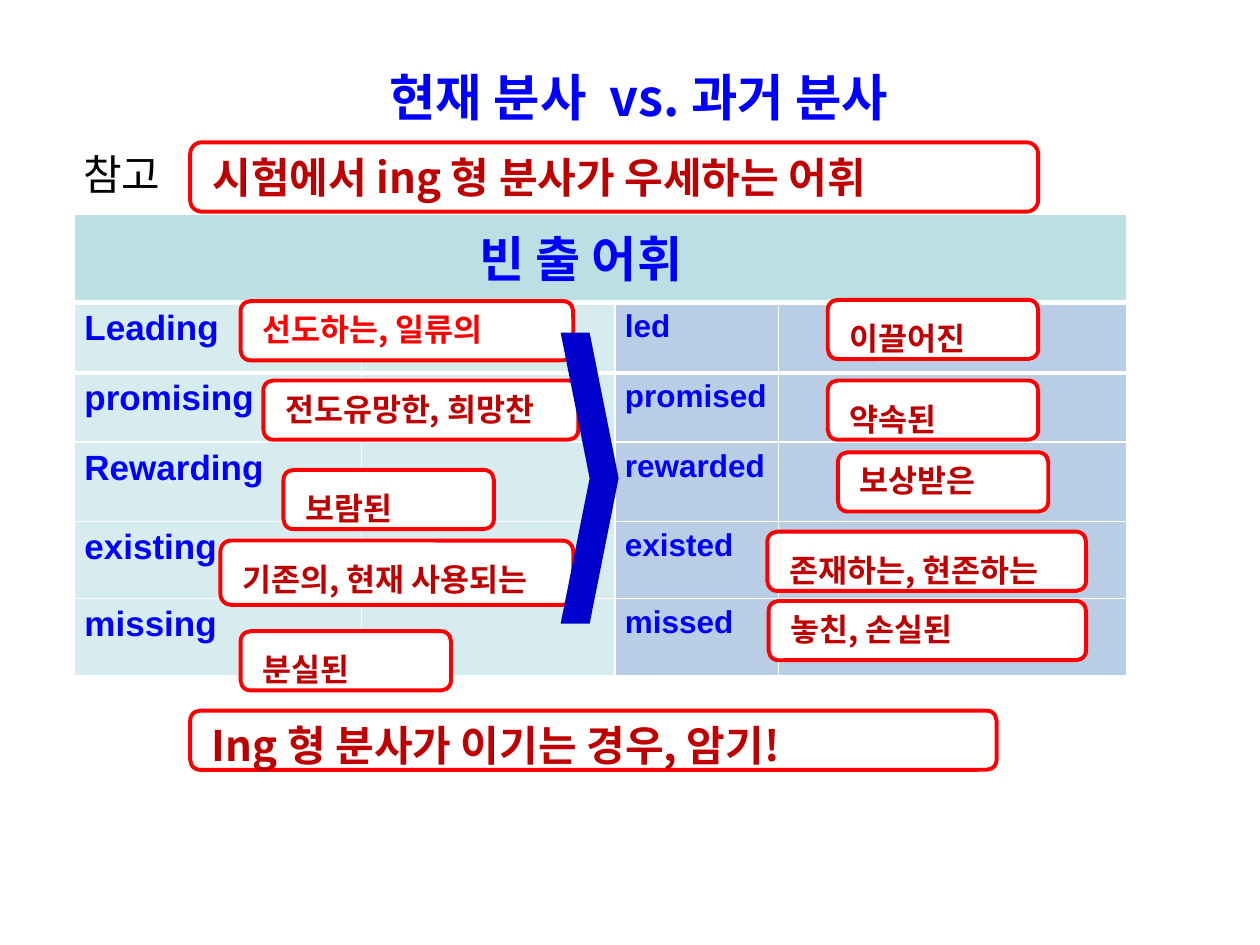
"""Build a vocabulary slide comparing present and past participles."""
from typing import NamedTuple

from lxml import etree
from pptx import Presentation
from pptx.dml.color import RGBColor
from pptx.enum.shapes import MSO_SHAPE
from pptx.enum.text import MSO_ANCHOR, MSO_AUTO_SIZE, PP_ALIGN
from pptx.oxml.ns import qn
from pptx.util import Inches, Length, Pt

ROUNDED, CHEVRON = MSO_SHAPE.ROUNDED_RECTANGLE, MSO_SHAPE.CHEVRON
TOP, MIDDLE = MSO_ANCHOR.TOP, MSO_ANCHOR.MIDDLE
LEFT, CENTER = PP_ALIGN.LEFT, PP_ALIGN.CENTER
NO_FIT = MSO_AUTO_SIZE.NONE

BLUE = RGBColor(0x00, 0x00, 0xFF)
NAVY = RGBColor(0x00, 0x00, 0xCC)
RED = RGBColor(0xFF, 0x00, 0x00)
CRIMSON = RGBColor(0xC0, 0x00, 0x00)
BLACK = RGBColor(0x00, 0x00, 0x00)
WHITE = RGBColor(0xFF, 0xFF, 0xFF)
TEAL = RGBColor(0xBB, 0xE0, 0xE3)
PALE_TEAL = RGBColor(0xD6, 0xEC, 0xEE)
PALE_BLUE = RGBColor(0xB9, 0xCD, 0xE5)

KOREAN, LATIN = "Noto Sans CJK KR", "Arial"
COLUMNS, ROWS = 100, 75
UNIT = Inches(0.1)
INSET = Inches(0.15)
DROP = Inches(0.13)
COLUMN_WIDTHS = (22.8, 20.1, 13, 27.6)
HEADER_HEIGHT = 7
COLUMN_FILLS = (PALE_TEAL, PALE_TEAL, PALE_BLUE, PALE_BLUE)


class Area(NamedTuple):
    """A rectangle in grid columns and rows."""

    col: float
    row: float
    cols: float
    rows: float

    def lengths(self) -> list[Length]:
        """Return left, top, width and height."""
        return [Length(round(n * UNIT)) for n in self]


class Word(NamedTuple):
    """A pair of participles and the height of its table row."""

    present: str
    past: str
    rows: float


class Box(NamedTuple):
    """A framed text, lowered inside its frame when dropped."""

    area: Area
    text: str
    size: float = 18
    color: RGBColor = CRIMSON
    dropped: bool = False


WORDS = (
    Word("Leading", "led", 5.6),
    Word("promising", "promised", 5.5),
    Word("Rewarding", "rewarded", 6.3),
    Word("existing", "existed", 6.1),
    Word("missing", "missed", 6.1),
)
MEANINGS = (
    Box(Area(19.1, 23.9, 26.4, 4.7), "선도하는, 일류의", color=RED),
    Box(Area(65.7, 23.8, 16.7, 4.7), "이끌어진", dropped=True),
    Box(Area(20.9, 30.2, 25, 4.7), "전도유망한, 희망찬"),
    Box(Area(65.7, 30.2, 16.7, 4.7), "약속된", dropped=True),
    Box(Area(22.5, 37.3, 16.7, 4.7), "보람된", dropped=True),
    Box(Area(66.5, 35.9, 16.7, 4.7), "보상받은"),
    Box(Area(17.5, 42.9, 28, 5.1), "기존의, 현재 사용되는", dropped=True),
    Box(Area(60.9, 42.2, 25.3, 4.7), "존재하는, 현존하는", dropped=True),
    Box(Area(19.1, 50.1, 16.7, 4.7), "분실된", dropped=True),
    Box(Area(61, 47.7, 25.2, 4.7), "놓친, 손실된"),
)
BANNERS = (
    Box(Area(15.1, 11.3, 67.3, 5.5), "시험에서 ing 형 분사가 우세하는 어휘", 24),
    Box(Area(15.1, 56.4, 64, 4.7), "Ing 형 분사가 이기는 경우, 암기!", 24),
)


def write(tf, text: str, size: float, color: RGBColor, font: str = KOREAN,
          bold: bool = True, align=LEFT) -> None:
    """Put one formatted run into a text frame."""
    p = tf.paragraphs[0]
    p.alignment = align
    r = p.add_run()
    r.text = text
    r.font.color.rgb = color
    for name, value in {"size": Pt(size), "bold": bold, "name": font}.items():
        setattr(r.font, name, value)
    east_asian = r.font._element.makeelement(qn("a:ea"), {"typeface": font})
    r.font._element.find(qn("a:latin")).addnext(east_asian)


def frame(tf, **values) -> None:
    """Set wrapping, anchor and margins of a text frame."""
    base = {"word_wrap": True, "auto_size": NO_FIT, "vertical_anchor": TOP}
    for name, value in {**base, **values}.items():
        setattr(tf, name, value)


def add_title(s) -> None:
    """Place and write the slide title."""
    sp = s.shapes.title
    sp.left, sp.top, sp.width, sp.height = Area(5, 3, 90, 8.3).lengths()
    frame(sp.text_frame, vertical_anchor=MIDDLE,
          margin_left=Inches(0.24), margin_top=Inches(0.15))
    write(sp.text_frame, "현재 분사  vs. 과거 분사", 28.8, BLUE, align=CENTER)


def add_label(s) -> None:
    """Add the small label beside the upper banner."""
    sp = s.shapes.add_textbox(*Area(5.1, 11.3, 10, 5).lengths())
    frame(sp.text_frame, margin_left=INSET)
    write(sp.text_frame, "참고", 24, BLACK, bold=False)


def rule(cell, tag: str) -> None:
    """Give one side of a cell a thick white border."""
    line = etree.Element(qn(tag), w=str(Pt(3)))
    fill = etree.SubElement(line, qn("a:solidFill"))
    etree.SubElement(fill, qn("a:srgbClr"), val=str(WHITE))
    cell._tc.get_or_add_tcPr().insert(0, line)


def add_words(s) -> None:
    """Add the table of participles under a merged heading."""
    heights = (HEADER_HEIGHT, *(word.rows for word in WORDS))
    area = Area(5.9, 17, sum(COLUMN_WIDTHS), sum(heights))
    table = s.shapes.add_table(len(heights), len(COLUMN_WIDTHS), *area.lengths()).table
    table.horz_banding = False
    for column, width in zip(table.columns, COLUMN_WIDTHS):
        column.width = Length(round(width * UNIT))
    for row, height in zip(table.rows, heights):
        row.height = Length(round(height * UNIT))
    header = table.cell(0, 0)
    header.merge(table.cell(0, len(COLUMN_WIDTHS) - 1))
    header.fill.solid()
    header.fill.fore_color.rgb = TEAL
    header.margin_right = Inches(0.41)
    write(header.text_frame, "빈 출 어휘", 28, BLUE, align=CENTER)
    for i, word in enumerate(WORDS, 1):
        for j, color in enumerate(COLUMN_FILLS):
            cell = table.cell(i, j)
            cell.margin_left = cell.margin_right = Inches(0.08)
            cell.fill.solid()
            cell.fill.fore_color.rgb = color
        write(table.cell(i, 0).text_frame, word.present, 20, BLUE, LATIN)
        write(table.cell(i, 2).text_frame, word.past, 18, BLUE, LATIN)
    for j in range(len(COLUMN_WIDTHS)):
        rule(table.cell(0, j), "a:lnB")
        rule(table.cell(1, j), "a:lnT")


def add_filled(s, kind, area: Area, color: RGBColor):
    """Add a plain filled shape without shadow."""
    sp = s.shapes.add_shape(kind, *area.lengths())
    sp.shadow.inherit = False
    sp.fill.solid()
    sp.fill.fore_color.rgb = color
    sp.line.fill.background()
    return sp


def add_box(s, box: Box) -> None:
    """Add a red rounded frame with its text."""
    sp = add_filled(s, ROUNDED, box.area, WHITE)
    sp.line.color.rgb = RED
    sp.line.width = Pt(2.25)
    top = DROP if box.dropped else Inches(0.05)
    frame(sp.text_frame, margin_left=INSET, margin_top=top, margin_bottom=0)
    write(sp.text_frame, box.text, box.size, box.color)


def main() -> None:
    """Build and save the slide."""
    prs = Presentation()
    prs.slide_width, prs.slide_height = COLUMNS * UNIT, ROWS * UNIT
    s = prs.slides.add_slide(prs.slide_layouts[5])
    add_title(s)
    add_label(s)
    add_words(s)
    for box in MEANINGS:
        add_box(s, box)
    add_filled(s, CHEVRON, Area(44.5, 26.4, 4.6, 23.1), NAVY)
    for box in BANNERS:
        add_box(s, box)
    prs.save("out.pptx")


if __name__ == "__main__":
    main()
